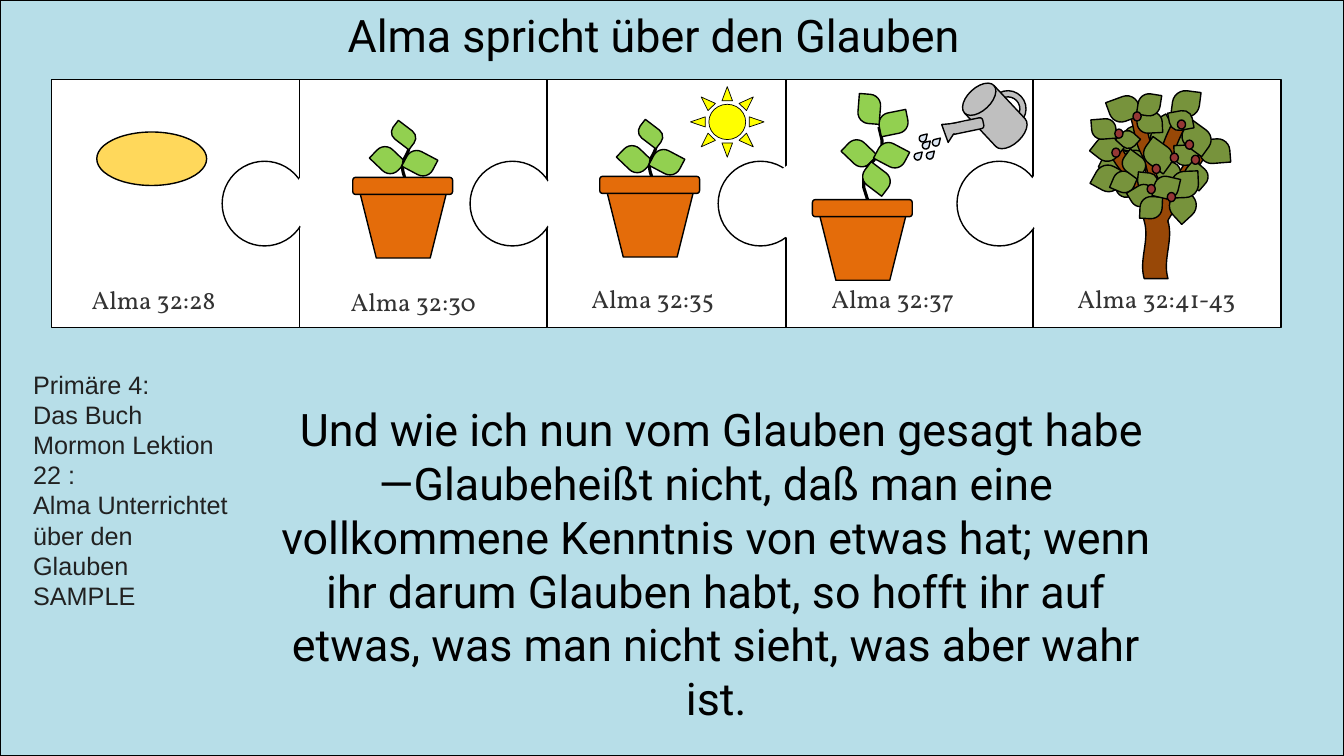
from pptx import Presentation
from pptx.dml.color import RGBColor
from pptx.enum.shapes import MSO_SHAPE as Kind
from pptx.enum.text import MSO_AUTO_SIZE as Fit, PP_ALIGN as Align
from pptx.util import Pt

BLACK = RGBColor(0x00, 0x00, 0x00)
WHITE = RGBColor(0xFF, 0xFF, 0xFF)
SKY = RGBColor(0xB7, 0xDE, 0xE8)
SEED = RGBColor(0xFF, 0xD8, 0x5B)
SUN = RGBColor(0xFF, 0xFF, 0x00)
SPROUT = RGBColor(0x92, 0xD0, 0x50)
CLAY = RGBColor(0xE4, 0x6C, 0x0A)
METAL = RGBColor(0xBF, 0xBF, 0xBF)
WATER = RGBColor(0xDC, 0xE6, 0xF2)
OLIVE = RGBColor(0x77, 0x93, 0x3C)
WOOD = RGBColor(0x98, 0x48, 0x07)
BERRY = RGBColor(0x95, 0x37, 0x35)
CAPTION = RGBColor(0x33, 0x33, 0x33)
NOTE = RGBColor(0x21, 0x21, 0x21)

TITLE = "Alma spricht über den Glauben"
VERSE = (" Und wie ich nun vom Glauben gesagt habe—Glaubeheißt nicht, daß man eine "
         "vollkommene Kenntnis von etwas hat; wenn ihr darum Glauben habt, so hofft ihr auf "
         "etwas, was man nicht sieht, was aber wahr ist.")
LESSON = ["Primäre 4:", "Das Buch Mormon Lektion 22 :",
          "Alma Unterrichtet über den Glauben SAMPLE"]
CAPTIONS = [
    ("Alma 32:28", 58.3, 199.4, 106.6),
    ("Alma 32:30", 243.4, 200.9, 106.6),
    ("Alma 32:35", 415.4, 198.7, 106.6),
    ("Alma 32:37", 586.8, 198.7, 106.6),
    ("Alma 32:41-43", 762.5, 198.7, 132.5),
]

PIECE_LEFTS = [36.7, 213.8, 391, 561.6, 738]
PIECE_TOP, PIECE_SIZE = 56.9, 177.1
KNOB_SHIFT, KNOB_TOP, KNOB_SIZE = 122, 115.2, 60.5
SOCKETS = [(209.5, 113.8), (387.4, 115.2), (548.6, 113.8), (733, 113.8)]

SMALL_PLANT = {
    "back": (14.4, -20.2, 20.9, 15.8, 43.7),
    "stem": [(38.2, 9.4), (38.9, 7.2), (38.2, 3.6), (36, -3.6), (35.3, -7.9), (36, -8.6),
             (36.7, -13), (38.2, -15.8), (39.6, -18.7), (40.3, -21.6), (40.3, -24.5),
             (38.9, -30.2)],
    "side": (37.4, -18, 20.9, 15.8, 27.8),
    "front": [(30.2, -39.6, 12.2, 18.7, 307.3)],
}
TALL_PLANT = {
    "back": (23, -41, 20.9, 15.8, 43.7),
    "stem": [(38.9, 12.2), (40.3, 7.9), (40.3, 2.9), (36.7, -8.6), (36.7, -15.1),
             (37.4, -16.6), (39.6, -23.8), (43.9, -28.1), (46.8, -33.1), (49.7, -38.2),
             (49.7, -42.5), (47.5, -51.8)],
    "side": (46.1, -39.6, 20.9, 15.8, 27.8),
    "front": [(38.2, -25.2, 15.1, 20.9, 307.3), (47.5, -62.6, 20.9, 15.8, 348.6),
              (30.2, -72.7, 20.9, 15.8, 274.6)],
}
PLANTS = [(252, 126.7, SMALL_PLANT), (428.4, 126, SMALL_PLANT), (580.3, 142.6, TALL_PLANT)]

DROPS = [(658.8, 101.5), (666, 99.4), (656.6, 96.5), (653, 109.4), (661.7, 108.7)]

BACK_LEAVES = [
    (833.8, 94.3, 17.3, 21.6, 85.5), (819.4, 85, 19.4, 18.7, 329.9),
    (802.1, 90, 19.4, 18.7, 10.4), (802.8, 107.3, 15.8, 15.8, 15.3),
    (787.7, 105.8, 19.4, 18.7, 26.4), (781.9, 118.1, 19.4, 18.7, 28.9),
    (798.5, 124.6, 14.4, 17.3, 71.7),
]
BRANCHES = [
    (784.8, 148.3, 82.1, 19.4, 270), (771.8, 115.2, 68.4, 10.8, 235.5),
    (809.3, 126.7, 68.4, 10.8, 298.7), (799.9, 104.4, 68.4, 10.8, 289.4),
    (785.5, 103, 68.4, 10.8, 252.4),
]
CROWN_LEAVES = [
    (781.9, 97.2, 18, 18, 38.2), (837.4, 64.8, 19.4, 18.7, 187.3),
    (794.2, 67, 17.3, 21.6, 69.8), (799.2, 93.6, 13, 12.2, 42.2),
    (781.2, 83.5, 14.4, 17.3, 85.5), (813.6, 78.5, 15.1, 18, 87.1),
    (794.9, 122.4, 15.8, 15.1, 22.8), (802.8, 108.7, 14.4, 17.3, 126.4),
    (827.3, 114.5, 14.4, 17.3, 87.1), (818.6, 100.1, 17.3, 21.6, 126),
    (812.9, 67, 15.8, 15.8, 8.9), (840.2, 102.2, 14.4, 17.3, 87.1),
    (859, 97.2, 17.3, 21.6, 85.5), (846, 87.8, 17.3, 21.6, 126),
    (836.6, 77.8, 13.7, 16.6, 79.4), (847.4, 116.6, 14.4, 17.3, 130.9),
]
CROWN_BERRIES = [(794.2, 105.8), (851, 110.9), (846.7, 100.1), (796.3, 92.2),
                 (809.3, 79.9), (841, 85.7), (823, 117.4), (835.9, 109.4)]
LOW_LEAVES = [
    (813.6, 122.4, 12.2, 14.4, 276.1), (808.6, 131, 14.4, 17.3, 238.6),
    (835.2, 137.5, 19.4, 18.7, 137.2), (836.6, 122.4, 19.4, 18.7, 177.7),
    (814.3, 140.4, 15.8, 15.8, 182.6), (824.4, 126, 17.3, 15.8, 193.2),
]
LOW_BERRIES = [(819.4, 131.8), (833.8, 137.5)]

deck = Presentation()
deck.slide_width, deck.slide_height = Pt(960), Pt(540)
page = deck.slides.add_slide(deck.slide_layouts[6])


def draw(kind, left, top, width, height, turn=0, fill=WHITE, line=BLACK, weight=1, adjust=()):
    shape = page.shapes.add_shape(kind, Pt(left), Pt(top), Pt(width), Pt(height))
    shape.shadow.inherit = False
    shape.rotation = turn
    shape.fill.solid()
    shape.fill.fore_color.rgb = fill
    if line is None:
        shape.line.fill.background()
    else:
        shape.line.color.rgb = line
        shape.line.width = Pt(weight)
    for index, value in enumerate(adjust):
        shape.adjustments[index] = value


def draw_leaf(frame, fill, left=0, top=0):
    x, y, width, height, turn = frame
    draw(Kind.ROUND_2_DIAG_RECTANGLE, left + x, top + y, width, height, turn, fill,
         adjust=(0.5, 0))


def draw_plant(left, top, plant):
    draw_leaf(plant["back"], SPROUT, left, top)
    points = [(Pt(left + x), Pt(top + y)) for x, y in plant["stem"]]
    builder = page.shapes.build_freeform(*points[0])
    builder.add_line_segments(points[1:], close=False)
    stem = builder.convert_to_shape()
    stem.shadow.inherit = False
    stem.fill.background()
    stem.line.color.rgb = BLACK
    stem.line.width = Pt(2.25)
    draw_leaf(plant["side"], SPROUT, left, top)
    draw(Kind.TRAPEZOID, left + 2.9, top + 2.2, 66.2, 55.4, 180, CLAY)
    draw(Kind.ROUNDED_RECTANGLE, left, top, 71.3, 12.2, fill=CLAY)
    for frame in plant["front"]:
        draw_leaf(frame, SPROUT, left, top)


def draw_tree_part(leaves, berries):
    for frame in leaves:
        draw_leaf(frame, OLIVE)
    for x, y in berries:
        draw(Kind.OVAL, x, y, 5.8, 6.5, fill=BERRY)


def write(lines, left, top, width, height, size, name, color, wrap=False, align=Align.LEFT):
    box = page.shapes.add_textbox(Pt(left), Pt(top), Pt(width), Pt(height))
    frame = box.text_frame
    frame.word_wrap = wrap
    frame.auto_size = Fit.SHAPE_TO_FIT_TEXT
    for index, line in enumerate(lines):
        para = frame.paragraphs[0] if index == 0 else frame.add_paragraph()
        para.alignment = align
        span = para.add_run()
        span.text = line
        for key, value in {"size": Pt(size), "name": name}.items():
            setattr(span.font, key, value)
        span.font.color.rgb = color


draw(Kind.RECTANGLE, 0, 0, 960, 540, fill=SKY)
for left in PIECE_LEFTS:
    draw(Kind.RECTANGLE, left, PIECE_TOP, PIECE_SIZE, PIECE_SIZE)
for left in PIECE_LEFTS[:-1]:
    draw(Kind.OVAL, left + KNOB_SHIFT, KNOB_TOP, KNOB_SIZE, KNOB_SIZE)
for left, top in SOCKETS:
    draw(Kind.OVAL, left, top, KNOB_SIZE, KNOB_SIZE, line=WHITE)

draw(Kind.OVAL, 69.1, 94.3, 78.5, 38.2, fill=SEED)
for left, top, plant in PLANTS:
    draw_plant(left, top, plant)
draw(Kind.SUN, 493.2, 61.9, 52.6, 50.4, fill=SUN, weight=0.5)

draw(Kind.DONUT, 707, 64.8, 25.9, 25.9, 316.9, METAL, adjust=[0.17])
draw(Kind.FLOWCHART_MAGNETIC_DISK, 696.2, 58.3, 28.8, 49, 316.9, METAL)
draw(Kind.ROUNDED_RECTANGLE, 685.4, 77, 7.9, 26.6, 258.2, METAL, adjust=[0.26])
draw(Kind.ISOSCELES_TRIANGLE, 668.9, 86.4, 16.6, 10.8, 302.6, METAL)
draw(Kind.ROUNDED_RECTANGLE, 681.8, 84.2, 6.5, 13.7, 258.2, METAL, None, adjust=[0.26])
for left, top in DROPS:
    draw(Kind.TEAR, left, top, 5, 5, fill=WATER, adjust=[1.29])

draw_tree_part(BACK_LEAVES, [])
for branch in BRANCHES:
    draw(Kind.DOUBLE_WAVE, *branch, fill=WOOD)
draw(Kind.OVAL, 820.1, 130.3, 13.7, 48.2, fill=WOOD, line=None)
draw_tree_part(CROWN_LEAVES, CROWN_BERRIES)
draw_tree_part(LOW_LEAVES, LOW_BERRIES)

for caption, left, top, width in CAPTIONS:
    write([caption], left, top, width, 28.8, 18, "Vollkorn", CAPTION)
write([VERSE], 189.4, 283.7, 644.4, 239.8, 32, "Roboto", BLACK, True, Align.CENTER)
write([TITLE], 241.2, 2.2, 512.6, 46.1, 32, "Roboto", BLACK)
write(LESSON, 16.6, 259.9, 155.5, 181.4, 18, "Arial", NOTE, True)

deck.save("out.pptx")
